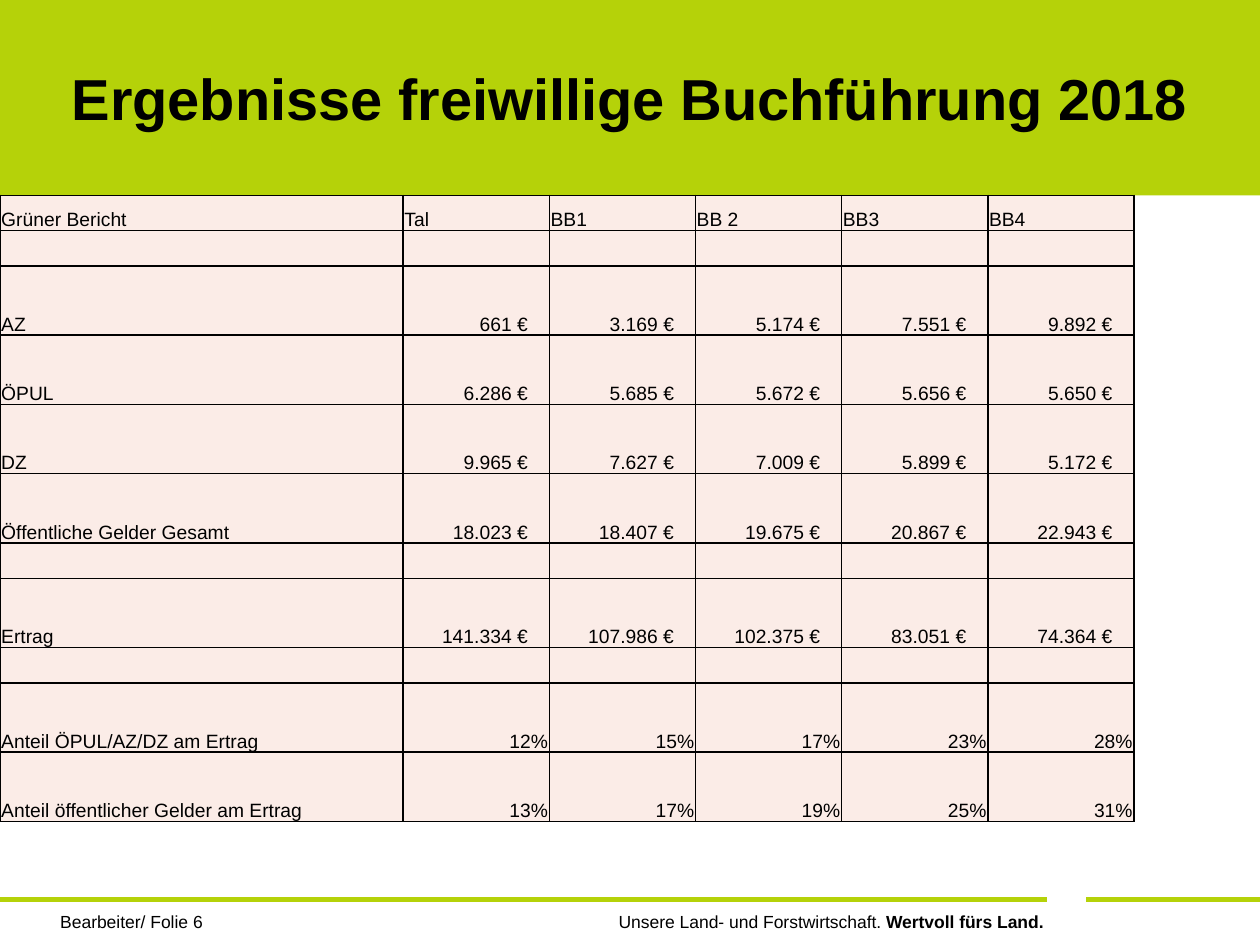
from dataclasses import dataclass
from lxml import etree
from pptx import Presentation
from pptx import util as u
from pptx.dml.color import RGBColor
from pptx.enum import shapes, text
from pptx.oxml import ns


@dataclass(frozen=True)
class Theme:
    font: str = "Arial"
    ink: RGBColor = RGBColor(0, 0, 0)
    green: RGBColor = RGBColor(0xB5, 0xD2, 0x09)
    rose: RGBColor = RGBColor(0xFB, 0xEC, 0xE7)
    head: int = 33
    body: int = 11
    foot: int = 10
    rule: float = 2.5
    edge: int = 1


THEME = Theme()
WIDE, HIGH = u.Inches(10), u.Inches(7.5)
TOP = 1.55
COLS = [3.2] + [1.16] * 5
LOW, TALL = 0.28, 0.55
PAD = 0.01
EURO_PAD = 0.17
FOOT_Y = 7.14

HEADS = ["Grüner Bericht", "Tal", "BB1", "BB 2", "BB3", "BB4"]
GAP = [""] * len(HEADS)
ROWS = [
    HEADS,
    GAP,
    ["AZ", "661 €", "3.169 €", "5.174 €", "7.551 €", "9.892 €"],
    ["ÖPUL", "6.286 €", "5.685 €", "5.672 €", "5.656 €", "5.650 €"],
    ["DZ", "9.965 €", "7.627 €", "7.009 €", "5.899 €", "5.172 €"],
    ["Öffentliche Gelder Gesamt", "18.023 €", "18.407 €", "19.675 €", "20.867 €", "22.943 €"],
    GAP,
    ["Ertrag", "141.334 €", "107.986 €", "102.375 €", "83.051 €", "74.364 €"],
    GAP,
    ["Anteil ÖPUL/AZ/DZ am Ertrag", "12%", "15%", "17%", "23%", "28%"],
    ["Anteil öffentlicher Gelder am Ertrag", "13%", "17%", "19%", "25%", "31%"],
]


def style(para, size, bold=False, align=text.PP_ALIGN.LEFT):
    para.alignment = align
    font = para.font
    font.name, font.size, font.bold = THEME.font, u.Pt(size), bold
    font.color.rgb = THEME.ink


def place(shape, left, top, width, height):
    shape.left, shape.top = u.Inches(left), u.Inches(top)
    shape.width, shape.height = u.Inches(width), u.Inches(height)


def title(slide, words):
    shape = slide.shapes.title
    place(shape, 0, 0, 10, TOP)
    shape.fill.solid()
    shape.fill.fore_color.rgb = THEME.green
    frame = shape.text_frame
    frame.text = words
    frame.vertical_anchor = text.MSO_ANCHOR.MIDDLE
    style(frame.paragraphs[0], THEME.head, True, text.PP_ALIGN.CENTER)


def border(cell):
    props = cell._tc.get_or_add_tcPr()
    for side in ("lnL", "lnR", "lnT", "lnB"):
        line = etree.SubElement(props, ns.qn(f"a:{side}"), w=str(u.Pt(THEME.edge)))
        fill = etree.SubElement(line, ns.qn("a:solidFill"))
        etree.SubElement(fill, ns.qn("a:srgbClr"), val=str(THEME.ink))


def fill_cell(cell, words):
    border(cell)
    cell.fill.solid()
    cell.fill.fore_color.rgb = THEME.rose
    euro = words.endswith("€")
    right = euro or words.endswith("%")
    cell.text = words
    cell.vertical_anchor = text.MSO_ANCHOR.BOTTOM
    cell.margin_left = cell.margin_top = u.Inches(PAD)
    cell.margin_right = u.Inches(EURO_PAD if euro else PAD)
    cell.margin_bottom = 0
    style(cell.text_frame.paragraphs[0], THEME.body,
          align=text.PP_ALIGN.RIGHT if right else text.PP_ALIGN.LEFT)


def table(slide):
    highs = [LOW if row in (HEADS, GAP) else TALL for row in ROWS]
    frame = slide.shapes.add_table(len(ROWS), len(COLS), 0, u.Inches(TOP),
                                   u.Inches(sum(COLS)), u.Inches(sum(highs)))
    grid = frame.table
    grid.first_row = grid.horz_banding = False
    for col, wide in zip(grid.columns, COLS):
        col.width = u.Inches(wide)
    for row, high, words in zip(grid.rows, highs, ROWS):
        row.height = u.Inches(high)
        for cell, word in zip(row.cells, words):
            fill_cell(cell, word)


def rule(slide, start, end):
    y = u.Inches(FOOT_Y)
    line = slide.shapes.add_connector(
        shapes.MSO_CONNECTOR.STRAIGHT, u.Inches(start), y, u.Inches(end), y)
    line.line.color.rgb = THEME.green
    line.line.width = u.Pt(THEME.rule)
    etree.SubElement(line._element.spPr, ns.qn("a:effectLst"))


def note(slide, box, plain, strong="", align=text.PP_ALIGN.LEFT):
    frame = slide.shapes.add_textbox(*map(u.Inches, box)).text_frame
    frame.word_wrap = True
    para = frame.paragraphs[0]
    para.add_run().text = plain
    style(para, THEME.foot, align=align)
    if strong:
        run = para.add_run()
        run.text = strong
        run.font.bold = True


def main():
    deck = Presentation()
    deck.slide_width, deck.slide_height = WIDE, HIGH
    slide = deck.slides.add_slide(deck.slide_layouts[5])
    note(slide, (0.38, 7.18, 2.33, 0.4), "Bearbeiter/ Folie 6")
    note(slide, (2.59, 7.18, 5.79, 0.4), "Unsere Land- und Forstwirtschaft. ",
         "Wertvoll fürs Land.", text.PP_ALIGN.RIGHT)
    rule(slide, 0, 8.31)
    rule(slide, 8.62, 10)
    title(slide, "Ergebnisse freiwillige Buchführung 2018")
    table(slide)
    deck.save("out.pptx")


if __name__ == "__main__":
    main()
